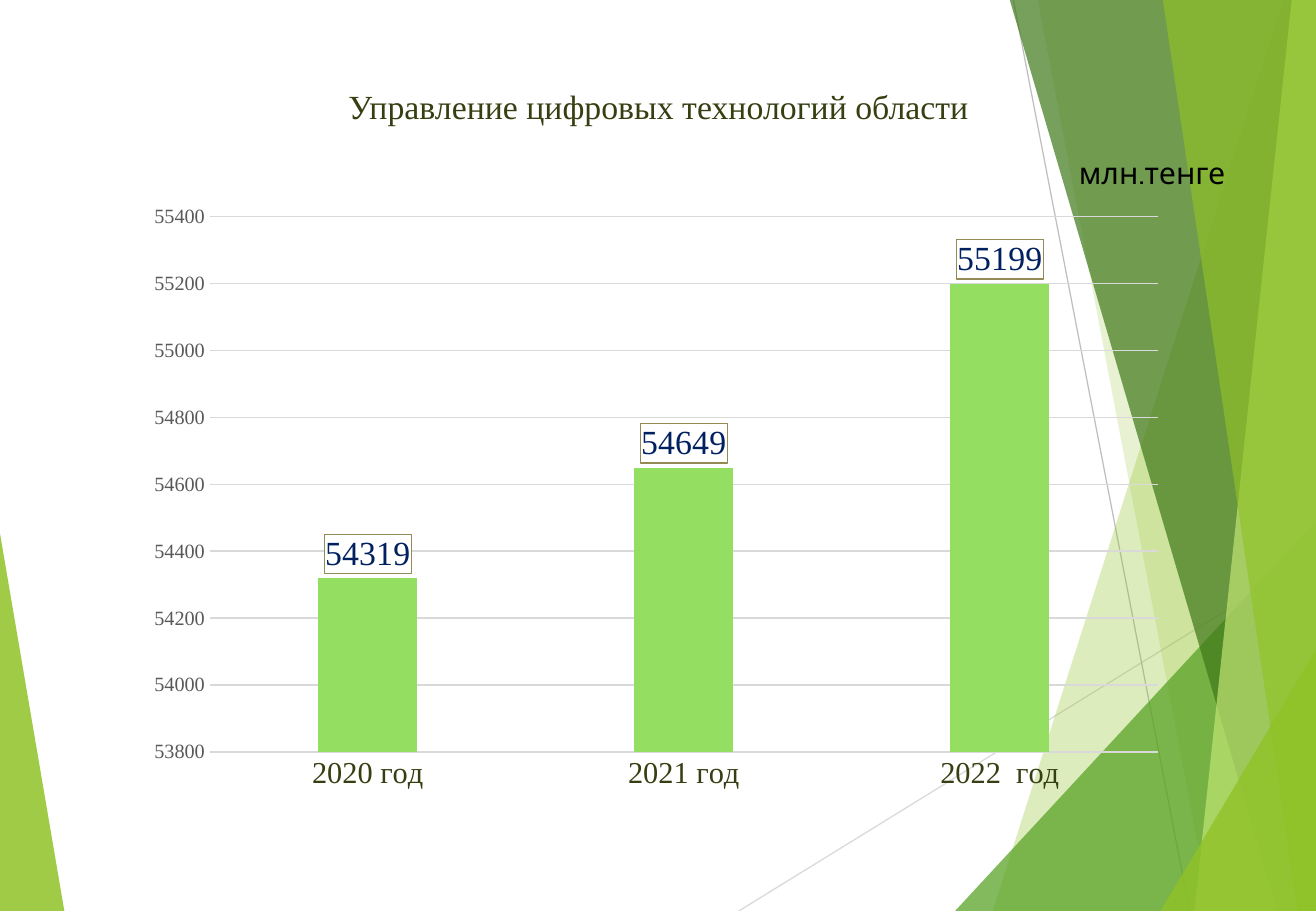
from lxml.etree import SubElement
from pptx import Presentation
from pptx.chart.data import CategoryChartData
from pptx.dml.color import RGBColor
from pptx.enum.chart import XL_CHART_TYPE, XL_LABEL_POSITION, XL_TICK_MARK
from pptx.enum.shapes import MSO_CONNECTOR
from pptx.enum.text import MSO_ANCHOR, PP_ALIGN
from pptx.oxml import parse_xml
from pptx.oxml.ns import nsdecls, qn
from pptx.util import Inches, Pt

COLORS = {
    "lime": "90C226", "green": "54A021", "forest": "3F7819", "pale": "C0E474",
    "bar": "94DE61", "olive": "363F11", "navy": "002060", "gray": "595959",
    "rule": "D9D9D9", "ray": "BFBFBF", "frame": "948A54", "white": "FFFFFF",
    "black": "000000",
}
SERIF = "Times New Roman"
WIDE, HIGH = 10.83, 7.5

# Corner points, colour and opacity of each facet, back to front
LEFT = [([(0, 4.39), (0.53, HIGH), (0, HIGH)], "lime", 85)]
RIGHT = [
    ([(10.56, 0), (8.17, HIGH), (WIDE, HIGH), (WIDE, 0)], "lime", 30),
    ([(8.54, 0), (9.96, HIGH), (WIDE, HIGH), (WIDE, 0)], "lime", 20),
    ([(7.86, HIGH), (WIDE, 4.29), (WIDE, HIGH)], "green", 72),
    ([(8.31, 0), (10.51, HIGH), (WIDE, HIGH), (WIDE, 0)], "forest", 70),
    ([(10.63, 0), (9.83, HIGH), (WIDE, HIGH), (WIDE, 0)], "pale", 70),
    ([(9.57, 0), (10.68, HIGH), (WIDE, HIGH), (WIDE, 0)], "lime", 65),
    ([(9.55, HIGH), (WIDE, 5.35), (WIDE, HIGH)], "lime", 80),
]
RAYS = [(6.08, HIGH, WIDE, 4.57, "rule"), (8.34, 0, 9.79, HIGH, "ray")]


def rgb(name):
    return RGBColor.from_string(COLORS[name])


def style(font, size, color, face=SERIF):
    font.size, font.name, font.bold = Pt(size), face, False
    font.color.rgb = rgb(color)


def stroke(line, color):
    line.color.rgb = rgb(color)
    line.width = Pt(0.75)


def add_facets(slide, facets):
    for points, color, alpha in facets:
        ends = [(Inches(x), Inches(y)) for x, y in points]
        pen = slide.shapes.build_freeform(*ends[0], scale=1.0)
        pen.add_line_segments(ends[1:], close=True)
        facet = pen.convert_to_shape()
        facet.shadow.inherit = False
        facet.line.fill.background()
        facet.fill.solid()
        facet.fill.fore_color.rgb = rgb(color)
        tone = facet._element.spPr.find(".//" + qn("a:srgbClr"))
        SubElement(tone, qn("a:alpha")).set("val", str(alpha * 1000))


def add_rays(slide):
    for *ends, color in RAYS:
        ray = slide.shapes.add_connector(
            MSO_CONNECTOR.STRAIGHT, *[Inches(n) for n in ends])
        stroke(ray.line, color)
        SubElement(ray._element.spPr, qn("a:effectLst"))


def add_decor(slide):
    add_facets(slide, LEFT)
    add_rays(slide)
    add_facets(slide, RIGHT)


def set_plot(chart, box):
    area = chart._chartSpace.chart.plotArea
    for old in area.findall(qn("c:layout")):
        area.remove(old)
    layout = parse_xml(f"<c:layout {nsdecls('c')}/>")
    manual = SubElement(layout, qn("c:manualLayout"))
    parts = [("layoutTarget", "inner"), ("xMode", "edge"), ("yMode", "edge")]
    for tag, val in parts + list(zip("xywh", box)):
        SubElement(manual, qn("c:" + tag)).set("val", str(val))
    area.insert(0, layout)


def set_labels(plot):
    plot.has_data_labels = True
    labels = plot.data_labels
    labels.show_value = True
    labels.position = XL_LABEL_POSITION.OUTSIDE_END
    style(labels.font, 20, "navy")
    # Framed white box behind each value
    frame = parse_xml(
        f"<c:spPr {nsdecls('c', 'a')}>"
        f'<a:solidFill><a:srgbClr val="{COLORS["white"]}"/></a:solidFill>'
        f'<a:ln w="9525"><a:solidFill><a:srgbClr val="{COLORS["frame"]}"/>'
        "</a:solidFill></a:ln></c:spPr>")
    labels._element.find(qn("c:txPr")).addprevious(frame)


def set_axes(chart):
    years, sums = chart.category_axis, chart.value_axis
    for axis, size, color in ((years, 18, "olive"), (sums, 12, "gray")):
        axis.major_tick_mark = axis.minor_tick_mark = XL_TICK_MARK.NONE
        style(axis.tick_labels.font, size, color)
    stroke(years.format.line, "rule")
    sums.format.line.fill.background()
    sums.minimum_scale, sums.maximum_scale = 53800, 55400
    sums.major_unit = 200
    stroke(sums.major_gridlines.format.line, "rule")


def add_bars(slide, box):
    data = CategoryChartData()
    data.categories = ["2020 год", "2021 год", "2022  год"]
    data.add_series("Series 1", (54319, 54649, 55199))
    chart = slide.shapes.add_chart(
        XL_CHART_TYPE.COLUMN_CLUSTERED, *[Inches(n) for n in box], data).chart
    chart.has_legend = chart.has_title = False
    style(chart.font, 10, "black")
    plot = chart.plots[0]
    plot.vary_by_categories = False
    plot.gap_width, plot.overlap = 219, -27
    fill = plot.series[0].format.fill
    fill.solid()
    fill.fore_color.rgb = rgb("bar")
    set_labels(plot)
    set_axes(chart)
    set_plot(chart, (0.056, 0.033, 0.918, 0.9))


def fill_text(shape, text, size, color, face, align):
    frame = shape.text_frame
    frame.text = text
    frame.word_wrap = True
    frame.vertical_anchor = MSO_ANCHOR.TOP
    para = frame.paragraphs[0]
    para.alignment = align
    style(para.runs[0].font, size, color, face)


def add_unit(slide, box):
    unit = slide.shapes.add_textbox(*[Inches(n) for n in box])
    fill_text(unit, "млн.тенге", 18, "black", "Cabin", PP_ALIGN.LEFT)


def set_title(slide, box):
    title = slide.shapes.title
    title.left, title.top, title.width, title.height = map(Inches, box)
    fill_text(title, "Управление цифровых технологий области",
              20, "olive", SERIF, PP_ALIGN.CENTER)
    slide.shapes._spTree.append(title._element)  # bring to front


def main():
    deck = Presentation()
    deck.slide_width, deck.slide_height = Inches(WIDE), Inches(HIGH)
    slide = deck.slides.add_slide(deck.slide_layouts[5])
    add_decor(slide)
    add_bars(slide, (1.25, 1.62, 8.5, 4.9))
    add_unit(slide, (8.78, 1.22, 1.73, 0.4))
    set_title(slide, (0.4, 0.66, 10.04, 0.44))
    deck.save("out.pptx")


if __name__ == "__main__":
    main()
